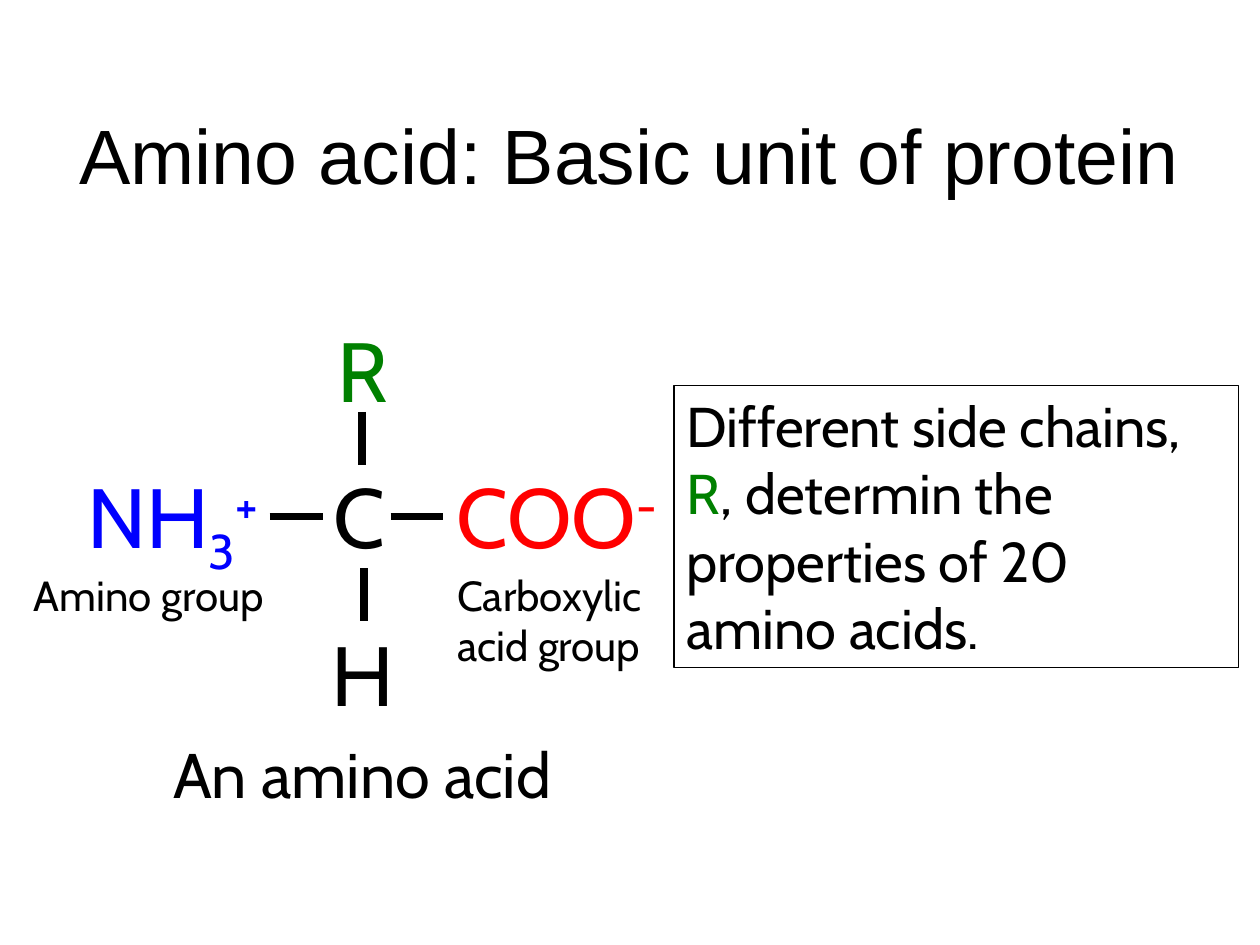
from lxml import etree
from pptx import Presentation
from pptx import util as u
from pptx.dml.color import RGBColor
from pptx.enum import shapes, text
from pptx.oxml.ns import qn

COLORS = {
    "ink": "000000",
    "amino": "0000FF",
    "acid": "FF0000",
    "side": "008000",
}
ALIGN = text.PP_ALIGN
BOND_LENGTH = 0.42


def color(name):
    return RGBColor.from_string(COLORS[name])


def add_span(para, words, size, font="Cabin", ink="ink", baseline=0):
    span = para.add_run()
    span.text = words
    span.font.name = font
    span.font.size = u.Pt(size)
    span.font.color.rgb = color(ink)
    if baseline:
        span.font._element.set("baseline", str(baseline * 1000))


def write(box, lines, size, align=ALIGN.CENTER, wrap=True,
          anchor=text.MSO_ANCHOR.TOP, **style):
    frame = box.text_frame
    frame.word_wrap = wrap
    frame.vertical_anchor = anchor
    para = frame.paragraphs[0]
    para.alignment = align
    for index, spans in enumerate(lines):
        if index:
            para.add_line_break()
        for words, changes in spans:
            add_span(para, words, size, **{**style, **changes})


def add_text(parent, place, words, size, **style):
    box = parent.shapes.add_textbox(*map(u.Inches, place))
    lines = [[(line, {})] for line in words.split("\n")] if isinstance(words, str) else [words]
    write(box, lines, size, **style)


def add_bond(parent, left, top, across):
    right = left + (BOND_LENGTH if across else 0)
    bottom = top + (0 if across else BOND_LENGTH)
    bond = parent.shapes.add_connector(
        shapes.MSO_CONNECTOR.STRAIGHT, *map(u.Inches, (left, top, right, bottom)))
    bond.line.color.rgb = color("ink")
    bond.line.width = u.Pt(4.5)
    etree.SubElement(bond._element.spPr, qn("a:effectLst"))


def add_framed_note(page, place, spans, size):
    note = page.shapes.add_shape(shapes.MSO_SHAPE.RECTANGLE, *map(u.Inches, place))
    note.shadow.inherit = False
    note.fill.background()
    note.line.color.rgb = color("ink")
    note.line.width = u.Pt(0.75)
    write(note, [spans], size, align=ALIGN.LEFT)


def add_molecule(page):
    molecule = page.shapes.add_group_shape()
    groups = [
        ((3.35, 3.64, 2.14, 0.9), [("COO", {}), ("-", {"baseline": 30})], "acid"),
        ((0.44, 3.64, 1.86, 0.9),
         [("NH", {}), ("3", {"baseline": -25}), ("+", {"baseline": 30})], "amino"),
        ((2.06, 3.64, 1.58, 0.9), "C", "ink"),
        ((2.09, 2.48, 1.58, 0.9), "R", "side"),
        ((2.09, 4.89, 1.58, 0.9), "H", "ink"),
    ]
    for place, words, ink in groups:
        add_text(molecule, place, words, 48, ink=ink)
    for left, top, across in [(2.14, 4.1, True), (2.87, 3.27, False),
                              (3.1, 4.1, True), (2.89, 4.51, False)]:
        add_bond(molecule, left, top, across)


def main():
    deck = Presentation()
    deck.slide_width, deck.slide_height = u.Inches(10), u.Inches(7.5)
    page = deck.slides.add_slide(deck.slide_layouts[6])

    add_text(page, (0.5, 0.89, 9, 0.66), "Amino acid: Basic unit of protein", 44,
             font="Arial", anchor=text.MSO_ANCHOR.MIDDLE)
    add_molecule(page)
    add_text(page, (1.21, 5.79, 3.33, 0.7), "An amino acid", 36)
    add_framed_note(page, (5.35, 3.06, 4.48, 2.24), [
        ("Different side chains, ", {}),
        ("R", {"ink": "side"}),
        (", determin the properties of 20 amino acids.", {}),
    ], 32)
    add_text(page, (0.17, 4.47, 2.08, 0.5), "Amino group", 24,
             align=ALIGN.LEFT, wrap=False)
    add_text(page, (3.53, 4.47, 1.8, 0.9), "Carboxylic\nacid group", 24,
             align=ALIGN.LEFT, wrap=False)

    deck.save("out.pptx")


if __name__ == "__main__":
    main()
